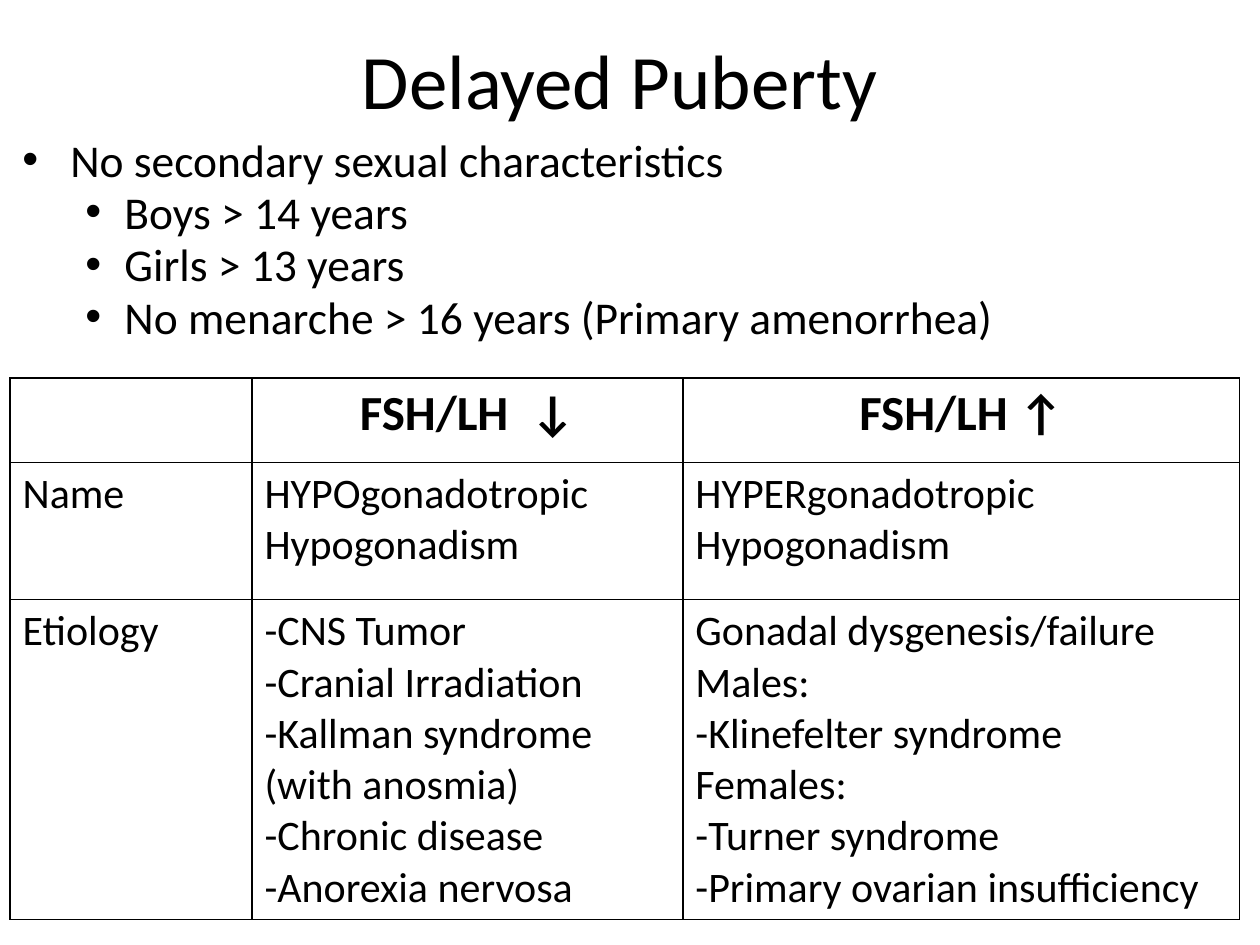
"""Build the Delayed Puberty slide with a bullet list and a hormone table."""
from lxml import etree
from pptx import Presentation
from pptx.dml.color import RGBColor
from pptx.enum import text
from pptx.oxml import ns
from pptx.util import Inches, Pt

BLACK = RGBColor(0x00, 0x00, 0x00)
WHITE = RGBColor(0xFF, 0xFF, 0xFF)

BULLETS = [
    (0, "No secondary sexual characteristics"),
    (1, "Boys > 14 years"),
    (1, "Girls > 13 years"),
    (1, "No menarche > 16 years (Primary amenorrhea)"),
]
INDENTS = [(0.38, -0.38), (0.81, -0.31)]

ROWS = [
    ["", "FSH/LH  ↓", "FSH/LH ↑"],
    ["Name", "HYPOgonadotropic Hypogonadism", "HYPERgonadotropic Hypogonadism"],
    [
        "Etiology",
        "-CNS Tumor\n-Cranial Irradiation\n-Kallman syndrome (with anosmia)\n"
        "-Chronic disease\n-Anorexia nervosa",
        "Gonadal dysgenesis/failure\nMales:\n-Klinefelter syndrome\nFemales:\n"
        "-Turner syndrome\n-Primary ovarian insufficiency",
    ],
]
COLUMN_WIDTHS = [1.92, 3.42, 4.42]
ROW_HEIGHTS = [0.67, 1.09, 2.54]


def style(para, size, bold=False):
    para.font.name = "Calibri"
    para.font.size = Pt(size)
    para.font.bold = bold
    para.font.color.rgb = BLACK


def add_border(cell, side):
    line = etree.SubElement(cell._tc.get_or_add_tcPr(), ns.qn(f"a:{side}"), w=str(Pt(1)))
    fill = etree.SubElement(line, ns.qn("a:solidFill"))
    etree.SubElement(fill, ns.qn("a:srgbClr"), val=str(BLACK))


deck = Presentation()
deck.slide_width, deck.slide_height = Inches(10), Inches(7.5)
page = deck.slides.add_slide(deck.slide_layouts[6])

title = page.shapes.add_textbox(Inches(0.42), 0, Inches(9), Inches(1.25)).text_frame
title.word_wrap = True
title.vertical_anchor = text.MSO_ANCHOR.MIDDLE
title.text = "Delayed Puberty"
title.paragraphs[0].alignment = text.PP_ALIGN.CENTER
style(title.paragraphs[0], 44)

body = page.shapes.add_textbox(Inches(0.08), Inches(1.08), Inches(9.5), Inches(2.08)).text_frame
body.word_wrap = True
body.text = "\n".join(wording for level, wording in BULLETS)
for para, (level, wording) in zip(body.paragraphs, BULLETS):
    para.level = level
    para.line_spacing = 0.8
    para.space_before = Pt(5)
    style(para, 26)
    margin, indent = INDENTS[level]
    properties = para._p.get_or_add_pPr()
    properties.set("marL", str(Inches(margin)))
    properties.set("indent", str(Inches(indent)))
    bullet_font = etree.Element(ns.qn("a:buFont"), typeface="Arial")
    bullet = etree.Element(ns.qn("a:buChar"), char="•")
    properties.find(ns.qn("a:defRPr")).addprevious(bullet_font)
    bullet_font.addnext(bullet)

table = page.shapes.add_table(
    len(ROWS), len(COLUMN_WIDTHS), Inches(0.08), Inches(3),
    Inches(sum(COLUMN_WIDTHS)), Inches(sum(ROW_HEIGHTS)),
).table
table.first_row = table.horz_banding = False
for column, width in zip(table.columns, COLUMN_WIDTHS):
    column.width = Inches(width)
for row, height, wordings in zip(table.rows, ROW_HEIGHTS, ROWS):
    row.height = Inches(height)
    header = wordings is ROWS[0]
    for cell, wording in zip(row.cells, wordings):
        cell.text = wording
        for para in cell.text_frame.paragraphs:
            style(para, 28 if header else 24, header)
            if header:
                para.alignment = text.PP_ALIGN.CENTER
        for side in ("lnL", "lnR", "lnT", "lnB"):
            add_border(cell, side)
        cell.fill.solid()
        cell.fill.fore_color.rgb = WHITE

deck.save("out.pptx")
